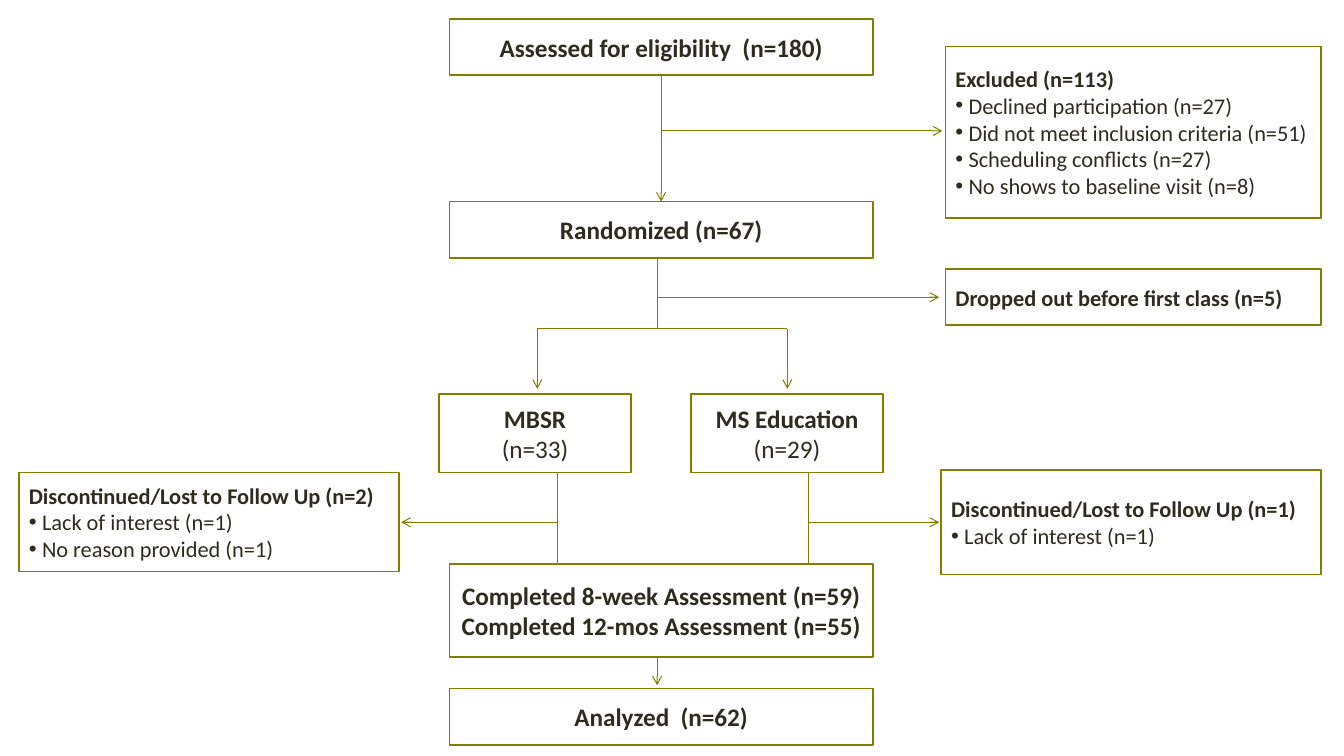
from lxml import etree
from pptx import Presentation
from pptx import util as u
from pptx.dml.color import RGBColor
from pptx.enum import shapes, text
from pptx.oxml.ns import qn

OLIVE = RGBColor(0x80, 0x80, 0x00)
INK = RGBColor(0x2E, 0x2B, 0x21)
WHITE = RGBColor(0xFF, 0xFF, 0xFF)
FONT = "Calibri"
BULLET_INDENT = 0.33

# All positions and sizes are in centimetres.
STAGE_X, STAGE_W, STAGE_H = 11.33, 10.67, 1.42
ARM_Y, ARM_W, ARM_H = 9.93, 4.83, 1.98
EXIT_X, EXIT_W = 23.83, 9.47
LOSS_W = 9.58

# Centred boxes: (left, top, width, height), bold heading, plain lines
STAGES = [
    ((STAGE_X, 0.48, STAGE_W, STAGE_H), "Assessed for eligibility  (n=180)", []),
    ((STAGE_X, 5.08, STAGE_W, STAGE_H), "Randomized (n=67)", []),
    ((11.07, ARM_Y, ARM_W, ARM_H), "MBSR", ["(n=33)"]),
    ((17.42, ARM_Y, ARM_W, ARM_H), "MS Education", ["(n=29)"]),
    ((STAGE_X, 14.22, STAGE_W, 2.34),
     "Completed 8-week Assessment (n=59) Completed 12-mos Assessment (n=55)", []),
    ((STAGE_X, 17.35, STAGE_W, STAGE_H), "Analyzed  (n=62)", []),
]

# Left-aligned boxes: (left, top, width, height), bold heading, bullets
EXITS = [
    ((EXIT_X, 1.17, EXIT_W, 4.32), "Excluded (n=113)",
     ["Declined participation (n=27)",
      "Did not meet inclusion criteria (n=51)",
      "Scheduling conflicts (n=27)",
      "No shows to baseline visit (n=8)"]),
    ((EXIT_X, 6.78, EXIT_W, STAGE_H), "Dropped out before first class (n=5)", []),
    ((0.48, 11.91, LOSS_W, 2.49), "Discontinued/Lost to Follow Up (n=2)",
     ["Lack of interest (n=1)", "No reason provided (n=1)"]),
    ((23.72, 11.84, LOSS_W, 2.64), "Discontinued/Lost to Follow Up (n=1)",
     ["Lack of interest (n=1)"]),
]

SCREEN_X, TRUNK_X = 16.66, 16.56
SPLIT_Y, LOSS_Y = 8.28, 13.16
MBSR_X, EDUCATION_X = 14.05, 20.37

# Start x, start y, end x, end y
ARROWS = [
    (SCREEN_X, 1.88, SCREEN_X, 5.08),
    (SCREEN_X, 3.3, 23.75, 3.3),
    (TRUNK_X, 7.49, 23.67, 7.49),
    (13.54, SPLIT_Y, 13.54, 9.8),
    (19.84, SPLIT_Y, 19.84, 9.8),
    (MBSR_X, LOSS_Y, 10.11, LOSS_Y),
    (EDUCATION_X, LOSS_Y, 23.67, LOSS_Y),
    (TRUNK_X, 14.73, TRUNK_X, 17.27),
]
PLAIN_LINES = [
    (TRUNK_X, 6.5, TRUNK_X, SPLIT_Y),
    (13.54, SPLIT_Y, 19.84, SPLIT_Y),
    (MBSR_X, 11.91, MBSR_X, 14.73),
    (EDUCATION_X, 11.91, EDUCATION_X, 14.73),
]


def add_line(s, ends, arrow):
    c = s.shapes.add_connector(shapes.MSO_CONNECTOR.STRAIGHT, *map(u.Cm, ends))
    c.line.color.rgb = OLIVE
    c.line.width = u.Pt(0.75)
    props = c._element.spPr
    if arrow:
        etree.SubElement(props.find(qn("a:ln")), qn("a:tailEnd"), type="arrow")
    etree.SubElement(props, qn("a:effectLst"))


def add_bullet(p):
    props = p._p.get_or_add_pPr()
    indent = u.Cm(BULLET_INDENT)
    props.set("marL", str(indent))
    props.set("indent", str(-indent))
    etree.SubElement(props, qn("a:buFont"), typeface="Arial")
    etree.SubElement(props, qn("a:buChar"), char="•")


def add_box(s, box, heading, lines, size, align, bulleted):
    sp = s.shapes.add_shape(shapes.MSO_SHAPE.RECTANGLE, *map(u.Cm, box))
    sp.shadow.inherit = False
    sp.fill.solid()
    sp.fill.fore_color.rgb = WHITE
    sp.line.color.rgb = OLIVE
    sp.line.width = u.Pt(1.25)
    tf = sp.text_frame
    tf.word_wrap = True
    tf.vertical_anchor = text.MSO_ANCHOR.MIDDLE
    for i, line in enumerate([heading] + lines):
        p = tf.add_paragraph() if i else tf.paragraphs[0]
        p.alignment = align
        if i and bulleted:
            add_bullet(p)
        r = p.add_run()
        r.text = line
        r.font.color.rgb = INK
        for name, value in {"name": FONT, "size": u.Pt(size), "bold": i == 0}.items():
            setattr(r.font, name, value)


def main():
    prs = Presentation()
    prs.slide_width, prs.slide_height = u.Cm(33.87), u.Cm(19.05)
    s = prs.slides.add_slide(prs.slide_layouts[6])
    for ends in PLAIN_LINES:
        add_line(s, ends, arrow=False)
    for ends in ARROWS:
        add_line(s, ends, arrow=True)
    for stage in STAGES:
        add_box(s, *stage, size=18, align=text.PP_ALIGN.CENTER, bulleted=False)
    for exit_box in EXITS:
        add_box(s, *exit_box, size=16, align=text.PP_ALIGN.LEFT, bulleted=True)
    prs.save("out.pptx")


if __name__ == "__main__":
    main()
